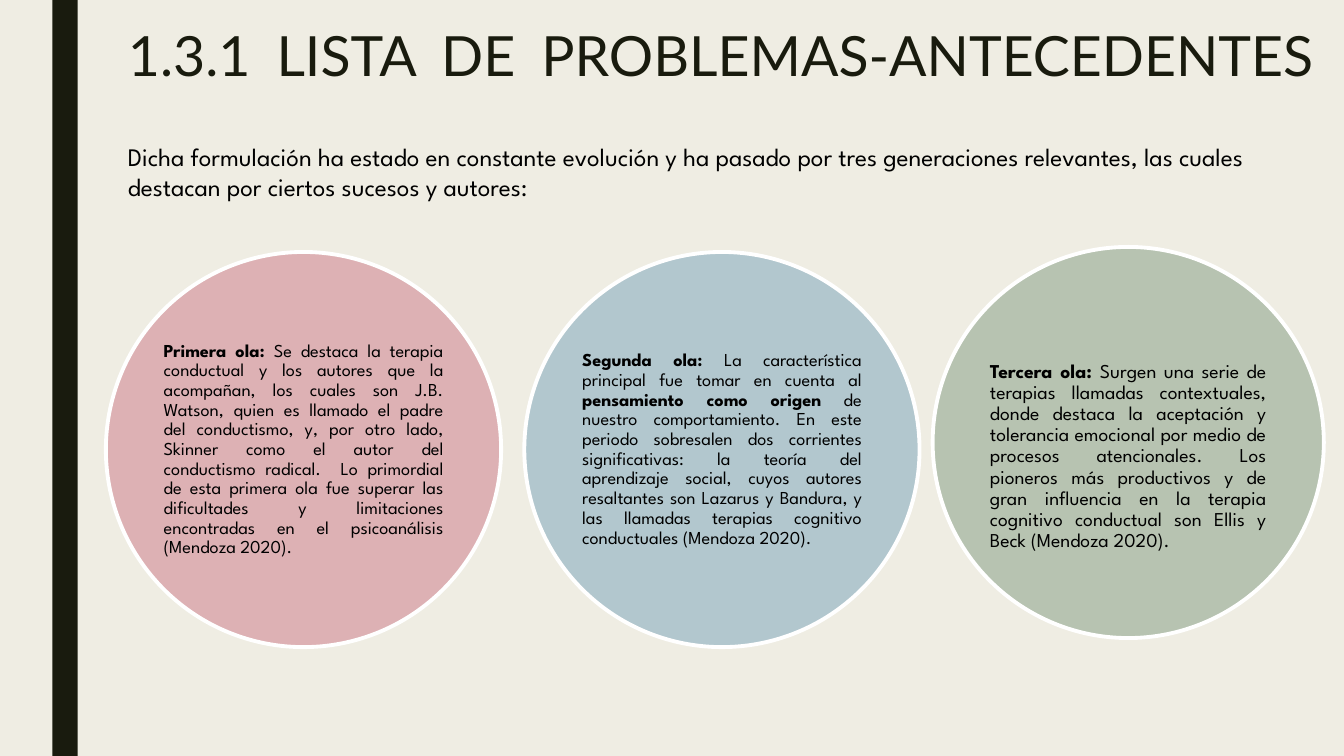
from lxml import etree
from pptx import Presentation
from pptx.dml.color import RGBColor
from pptx.enum import shapes, text
from pptx.oxml import ns
from pptx.util import Inches, Pt

INK = "191B0E"
BLACK = "000000"
BODY_FONT = "League Spartan"

WAVES = [
    (1.05, 2.5, 3.92, "CD7786", 13, 0, [
        ("Primera ola: ", True),
        ("Se destaca la terapia conductual y los autores que la acompañan, los cuales son "
         "J.B. Watson, quien es llamado el padre del conductismo, y, por otro lado, Skinner "
         "como el autor del conductismo radical.  Lo primordial de esta primera ola fue "
         "superar las dificultades y limitaciones encontradas en el psicoanálisis "
         "(Mendoza 2020).", False),
    ]),
    (5.2, 2.5, 3.92, "77A2BB", 13, 0, [
        ("Segunda ola: ", True),
        ("La característica principal fue tomar en cuenta al ", False),
        ("pensamiento como origen", True),
        (" de nuestro comportamiento. En este periodo sobresalen dos corrientes "
         "significativas: la teoría del aprendizaje social, cuyos autores resaltantes son "
         "Lazarus y Bandura, y las llamadas terapias cognitivo conductuales "
         "(Mendoza 2020).", False),
    ]),
    (9.25, 2.45, 3.88, "809B81", 14, 0.28, [
        ("Tercera ola: ", True),
        ("Surgen una serie de terapias llamadas contextuales, donde destaca la aceptación y "
         "tolerancia emocional por medio de procesos atencionales. Los pioneros más "
         "productivos y de gran influencia en la terapia cognitivo conductual son Ellis y "
         "Beck (Mendoza 2020).", False),
    ]),
]


def paint(color_format, color):
    color_format.rgb = RGBColor.from_string(color)


def fill_solid(fill, color):
    fill.solid()
    paint(fill.fore_color, color)


def add_run(paragraph, words, size, font_name, color, bold=False):
    run = paragraph.add_run()
    run.text = words
    run.font.size = Pt(size)
    run.font.name = font_name
    run.font.bold = bold
    paint(run.font.color, color)


def add_side_bar(slide):
    bar = slide.shapes.add_shape(
        shapes.MSO_SHAPE.RECTANGLE, Inches(0.52), 0, Inches(0.25), Inches(7.5))
    bar.shadow.inherit = False
    fill_solid(bar.fill, INK)
    bar.line.fill.background()


def add_text_box(slide, top, height):
    box = slide.shapes.add_textbox(Inches(1.17), Inches(top), Inches(11.96), Inches(height))
    box.text_frame.word_wrap = True
    return box.text_frame


def add_title(slide):
    paragraph = add_text_box(slide, 0.24, 1.04).paragraphs[0]
    paragraph.alignment = text.PP_ALIGN.JUSTIFY
    paragraph.line_spacing = 0.89
    add_run(paragraph, "1.3.1 LISTA DE PROBLEMAS-ANTECEDENTES", 39.6, "Lato", INK)
    paragraph.add_line_break()


def add_introduction(slide):
    frame = add_text_box(slide, 1.06, 1.01)
    frame.margin_top = Inches(0.34)
    add_run(frame.paragraphs[0],
            "Dicha formulación ha estado en constante evolución y ha pasado por tres "
            "generaciones relevantes, las cuales destacan por ciertos sucesos y autores:",
            18, BODY_FONT, BLACK)


def add_wave(slide, left, top, diameter, color, size, margin_top, passages):
    circle = slide.shapes.add_shape(
        shapes.MSO_SHAPE.OVAL, Inches(left), Inches(top), Inches(diameter), Inches(diameter))
    circle.shadow.inherit = False
    fill_solid(circle.fill, color)
    fill_color = circle.element.spPr.find(ns.qn("a:solidFill")).find(ns.qn("a:srgbClr"))
    etree.SubElement(fill_color, ns.qn("a:alpha"), val="50000")
    paint(circle.line.color, "FFFFFF")
    circle.line.width = Pt(2.75)

    frame = circle.text_frame
    frame.word_wrap = True
    frame.vertical_anchor = text.MSO_ANCHOR.MIDDLE
    frame.margin_left = frame.margin_right = frame.margin_bottom = 0
    frame.margin_top = Inches(margin_top)
    paragraph = frame.paragraphs[0]
    paragraph.alignment = text.PP_ALIGN.JUSTIFY
    paragraph.line_spacing = 0.9
    for words, bold in passages:
        add_run(paragraph, words, size, BODY_FONT, BLACK, bold)


def main():
    presentation = Presentation()
    presentation.slide_width = Inches(13.33)
    presentation.slide_height = Inches(7.5)
    slide = presentation.slides.add_slide(presentation.slide_layouts[6])
    fill_solid(slide.background.fill, "EFEDE3")
    add_side_bar(slide)
    add_title(slide)
    for wave in WAVES:
        add_wave(slide, *wave)
    add_introduction(slide)
    presentation.save("out.pptx")


if __name__ == "__main__":
    main()
